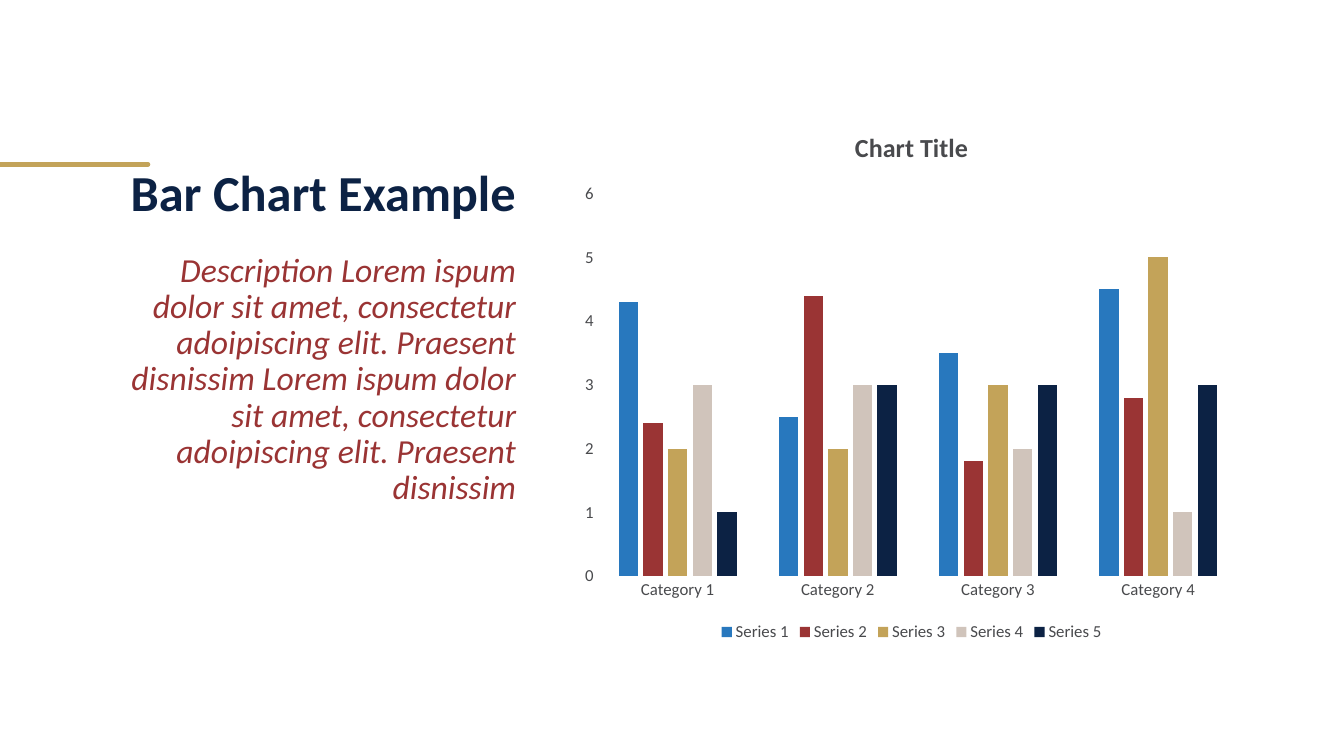
import pptx
import pptx.chart.data
import pptx.dml.color
import pptx.enum.chart
import pptx.enum.shapes
import pptx.enum.text
import pptx.oxml
import pptx.oxml.ns
import pptx.util
from pptx.util import Cm

NAVY, RED, GOLD = "0C2244", "9A3434", "C3A359"
BLUE, SAND, GREY, WHITE = "2878BE", "D0C4BB", "494A4D", "FFFFFF"


def color(code):
    return pptx.dml.color.RGBColor.from_string(code)


def add_tag(parent, tag):
    node = pptx.oxml.parse_xml(f"<{tag} {pptx.oxml.ns.nsdecls('a')}/>")
    parent.append(node)
    return node


class Deck:
    """Holds the style and the current slide."""

    face = "Calibri"

    def __init__(self):
        self.file = pptx.Presentation()
        self.file.slide_width, self.file.slide_height = Cm(33.87), Cm(19.05)
        self.slide = self.file.slides.add_slide(self.file.slide_layouts[1])

    def style(self, font, size, code, bold=False, slant=False):
        font.name, font.size = self.face, pptx.util.Pt(size)
        font.bold, font.italic = bold, slant
        font.color.rgb = color(code)

    def text(self, holder, words, box, anchor, size, code, **look):
        holder.left, holder.top, holder.width, holder.height = map(Cm, box)
        frame = holder.text_frame
        frame.text = words
        frame.word_wrap = True
        frame.auto_size = pptx.enum.text.MSO_AUTO_SIZE.NONE
        frame.vertical_anchor = anchor
        para = frame.paragraphs[0]
        props = para._p.get_or_add_pPr()
        props.set("marL", "0")
        props.set("indent", "0")
        para.alignment = pptx.enum.text.PP_ALIGN.RIGHT
        para.line_spacing = 0.9
        para.space_before = pptx.util.Pt(0)
        add_tag(props, "a:buNone")
        self.style(para.runs[0].font, size, code, **look)

    def rule(self, x1, x2, y, code, width):
        line = self.slide.shapes.add_connector(
            pptx.enum.shapes.MSO_CONNECTOR.STRAIGHT, Cm(x1), Cm(y), Cm(x2), Cm(y))
        line.line.color.rgb = color(code)
        line.line.width = pptx.util.Pt(width)
        line.line._get_or_add_ln().set("cap", "rnd")
        add_tag(line._element.spPr, "a:effectLst")

    def axis(self, axis):
        axis.major_tick_mark = axis.minor_tick_mark = pptx.enum.chart.XL_TICK_MARK.NONE
        self.style(axis.tick_labels.font, 12, GREY)

    def columns(self, title, cats, series, box):
        data = pptx.chart.data.CategoryChartData()
        data.categories = cats
        for name, code, values in series:
            data.add_series(name, values)
        chart = self.slide.shapes.add_chart(
            pptx.enum.chart.XL_CHART_TYPE.COLUMN_CLUSTERED, *map(Cm, box), data).chart
        self.style(chart.font, 10, GREY)

        # Title and legend
        chart.has_title = True
        chart.chart_title.include_in_layout = False
        frame = chart.chart_title.text_frame
        frame.text = title
        self.style(frame.paragraphs[0].runs[0].font, 18.6, GREY, bold=True)
        chart.has_legend = True
        chart.legend.position = pptx.enum.chart.XL_LEGEND_POSITION.BOTTOM
        chart.legend.include_in_layout = False
        self.style(chart.legend.font, 12, GREY)

        # Axes
        cat, val = chart.category_axis, chart.value_axis
        self.axis(cat)
        self.axis(val)
        val.minimum_scale, val.maximum_scale, val.major_unit = 0, 6, 1
        val.has_major_gridlines = True
        val.format.line.fill.background()
        for line in (cat.format.line, val.major_gridlines.format.line):
            line.color.rgb = color(WHITE)
            line.width = pptx.util.Pt(0.75)

        # Bars
        plot = chart.plots[0]
        plot.gap_width, plot.overlap = 219, -27
        plot.vary_by_categories = False
        for bars, (name, code, values) in zip(plot.series, series):
            bars.invert_if_negative = False
            bars.format.fill.solid()
            bars.format.fill.fore_color.rgb = color(code)


def main():
    deck = Deck()
    title, body = deck.slide.placeholders
    anchor = pptx.enum.text.MSO_ANCHOR

    # Accent line
    deck.rule(0, 3.73, 4.14, GOLD, 3.25)

    # Title and description
    deck.text(title, "Bar Chart Example", (2.34, 1.27, 10.92, 4.45),
              anchor.BOTTOM, 36, NAVY, bold=True)
    deck.text(body, "Description Lorem ispum dolor sit amet, consectetur adoipiscing "
              "elit. Praesent disnissim Lorem ispum dolor sit amet, consectetur "
              "adoipiscing elit. Praesent disnissim", (2.34, 6.25, 10.92, 10.06),
              anchor.TOP, 24, RED, slant=True)

    # Chart
    cats = [f"Category {n}" for n in range(1, 5)]
    series = [
        ("Series 1", BLUE, (4.3, 2.5, 3.5, 4.5)),
        ("Series 2", RED, (2.4, 4.4, 1.8, 2.8)),
        ("Series 3", GOLD, (2, 2, 3, 5)),
        ("Series 4", SAND, (3, 3, 2, 1)),
        ("Series 5", NAVY, (1, 3, 3, 3)),
    ]
    deck.columns("Chart Title", cats, series, (14.4, 2.74, 17.15, 13.54))

    deck.file.save("out.pptx")


if __name__ == "__main__":
    main()
